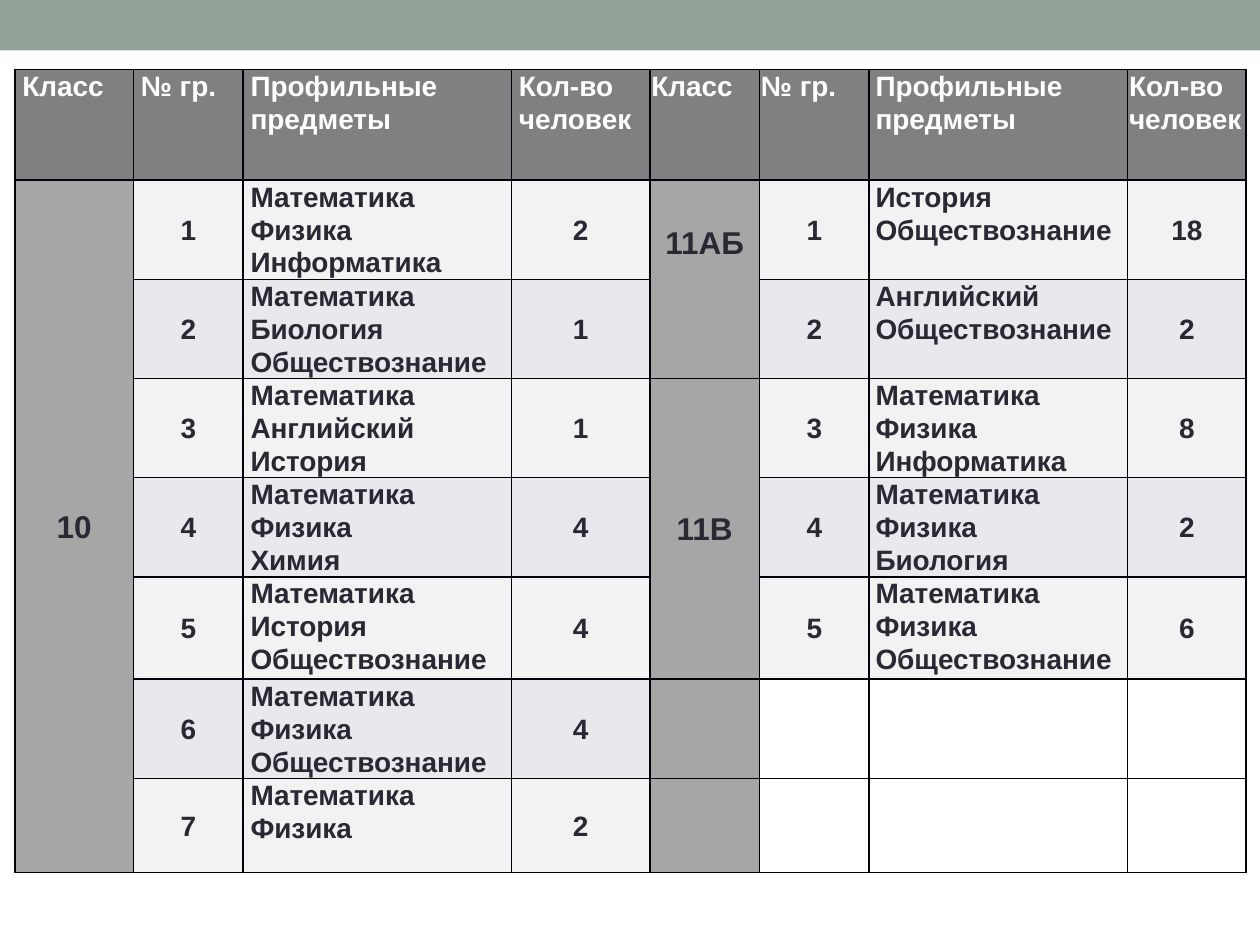
from dataclasses import dataclass

from lxml.etree import SubElement
from pptx import Presentation
from pptx.dml.color import RGBColor as RGB
from pptx.enum.shapes import MSO_SHAPE
from pptx.enum.text import MSO_ANCHOR as ANCHOR, PP_ALIGN as ALIGN
from pptx.oxml.ns import qn
from pptx.util import Cm, Pt

HEADINGS = ["Класс", "№ гр.", "Профильные предметы", "Кол-во человек"]
# (group number, subjects, number of students)
GRADE_10 = [
    (1, ["Математика", "Физика", "Информатика"], 2),
    (2, ["Математика", "Биология", "Обществознание"], 1),
    (3, ["Математика", "Английский", "История"], 1),
    (4, ["Математика", "Физика", "Химия"], 4),
    (5, ["Математика", "История", "Обществознание"], 4),
    (6, ["Математика", "Физика", "Обществознание"], 4),
    (7, ["Математика", "Физика"], 2),
]
GRADE_11 = [
    (1, ["История", "Обществознание"], 18),
    (2, ["Английский", "Обществознание"], 2),
    (3, ["Математика", "Физика", "Информатика"], 8),
    (4, ["Математика", "Физика", "Биология"], 2),
    (5, ["Математика", "Физика", "Обществознание"], 6),
]
# (name, first row, last row, column, bottom margin in cm)
CLASSES = [("10", 1, 7, 0, 0), ("11АБ", 1, 2, 4, 1.5), ("11В", 3, 5, 4, 0)]

COLUMN_WIDTHS = [2.39, 2.21, 5.41, 2.79, 2.21, 2.21, 5.21, 2.39]
ROW_HEIGHTS = [2.23, 2, 2, 2, 2, 2.06, 2, 1.9]
SIDE_MARGINS = [0.15] * 4 + [0.03] * 4
SUBJECT_MARGIN_11 = 0.13


@dataclass(frozen=True)
class Theme:
    font: str = "Arial"
    text_size: int = 16
    class_size: int = 18
    line_spacing: float = 1.06
    border_width: int = 1
    band: str = "93A299"
    border: str = "00000A"
    header: str = "808080"
    header_text: str = "FFFFFF"
    class_fill: str = "A6A6A6"
    text: str = "292934"
    stripes: tuple = ("F2F2F2", "E8E8ED")


THEME = Theme()


def draw_borders(cell):
    properties = cell._tc.get_or_add_tcPr()
    for side in ("lnL", "lnR", "lnT", "lnB"):
        line = SubElement(properties, qn(f"a:{side}"), w=str(Pt(THEME.border_width)))
        fill = SubElement(line, qn("a:solidFill"))
        SubElement(fill, qn("a:srgbClr"), val=THEME.border)


def paint(cell, color):
    cell.fill.solid()
    cell.fill.fore_color.rgb = RGB.from_string(color)


def write(cell, lines, color=THEME.text, size=THEME.text_size, centred=False):
    cell.vertical_anchor = ANCHOR.MIDDLE if centred else ANCHOR.TOP
    frame = cell.text_frame
    for i, line in enumerate(lines):
        paragraph = frame.add_paragraph() if i else frame.paragraphs[0]
        paragraph.alignment = ALIGN.CENTER if centred else ALIGN.LEFT
        paragraph.line_spacing = THEME.line_spacing
        run = paragraph.add_run()
        run.text = line
        run.font.name = THEME.font
        run.font.size = Pt(size)
        run.font.bold = True
        run.font.color.rgb = RGB.from_string(color)


def prepare_grid(table):
    """Set sizes, margins, borders and the fills of the class columns."""
    table.first_row = table.horz_banding = False
    for column, width in zip(table.columns, COLUMN_WIDTHS):
        column.width = Cm(width)
    for row, height in zip(table.rows, ROW_HEIGHTS):
        row.height = Cm(height)
        for c, cell in enumerate(row.cells):
            cell.margin_left = cell.margin_right = Cm(SIDE_MARGINS[c])
            cell.margin_top = cell.margin_bottom = 0
            draw_borders(cell)
            if c % 4 == 0:
                paint(cell, THEME.class_fill)
            else:
                cell.fill.background()
        row.cells[6].margin_left = Cm(SUBJECT_MARGIN_11)


def fill_groups(table, groups, first_column):
    for r, (number, subjects, students) in enumerate(groups, start=1):
        contents = [([str(number)], True), (subjects, False), ([str(students)], True)]
        for c, (lines, centred) in enumerate(contents, start=first_column):
            cell = table.cell(r, c)
            paint(cell, THEME.stripes[(r - 1) % 2])
            write(cell, lines, centred=centred)


def main():
    prs = Presentation()
    prs.slide_width, prs.slide_height = Cm(25.4), Cm(19.05)
    slide = prs.slides.add_slide(prs.slide_layouts[6])

    band = slide.shapes.add_shape(MSO_SHAPE.RECTANGLE, 0, 0, prs.slide_width, Cm(1.02))
    band.shadow.inherit = False
    paint(band, THEME.band)
    band.line.fill.background()

    table = slide.shapes.add_table(
        len(ROW_HEIGHTS), len(COLUMN_WIDTHS), Cm(0.3), Cm(1.4),
        Cm(sum(COLUMN_WIDTHS)), Cm(sum(ROW_HEIGHTS))).table
    prepare_grid(table)
    for c, heading in enumerate(HEADINGS * 2):
        paint(table.cell(0, c), THEME.header)
        write(table.cell(0, c), [heading], THEME.header_text)
    fill_groups(table, GRADE_10, 1)
    fill_groups(table, GRADE_11, 5)
    for name, first, last, column, bottom in CLASSES:
        cell = table.cell(first, column)
        cell.merge(table.cell(last, column))
        cell.margin_bottom = Cm(bottom)
        write(cell, [name], size=THEME.class_size, centred=True)

    prs.save("out.pptx")


if __name__ == "__main__":
    main()
